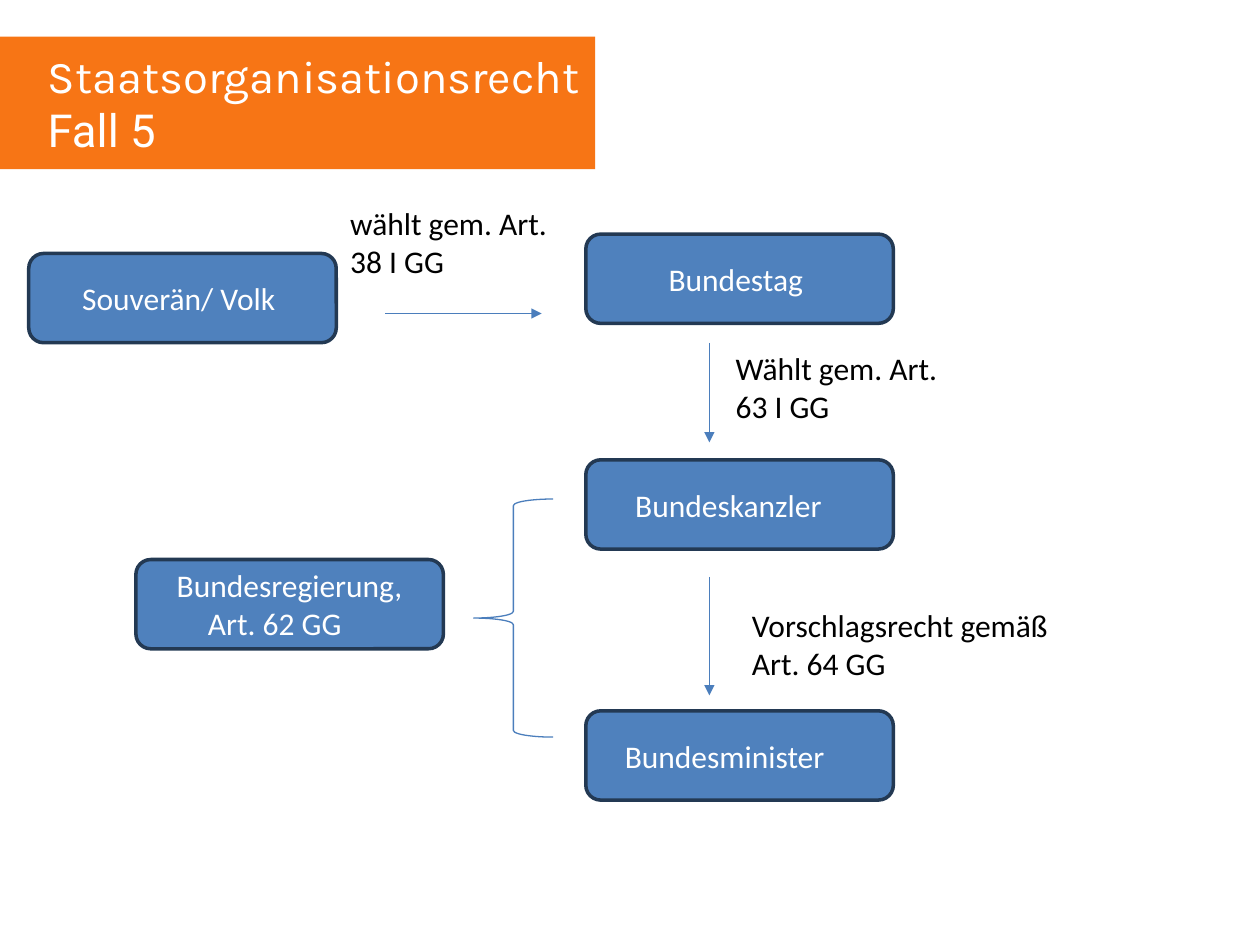
import dataclasses

import pptx
import pptx.dml.color
import pptx.enum.shapes
import pptx.enum.text
import pptx.oxml
import pptx.oxml.ns
import pptx.util

Cm = pptx.util.Cm
Pt = pptx.util.Pt
ShapeKind = pptx.enum.shapes.MSO_SHAPE
Alignment = pptx.enum.text.PP_ALIGN
Anchor = pptx.enum.text.MSO_ANCHOR
AutoSize = pptx.enum.text.MSO_AUTO_SIZE


def color(value):
    return pptx.dml.color.RGBColor.from_string(value)


@dataclasses.dataclass(frozen=True)
class Theme:
    banner: object = color("F77515")
    box: object = color("4F81BD")
    border: object = color("233953")
    link: object = color("4B7EBC")
    light: object = color("FFFFFF")
    dark: object = color("000000")
    body_font: str = "Calibri"
    title_size: object = Pt(26)
    body_size: object = Pt(18)
    border_width: object = Pt(2)
    link_width: object = Pt(0.75)


THEME = Theme()
BOX_WIDTH, BOX_HEIGHT = 6.2, 1.8
ORGAN_LEFT = 11.81
ARROW_LEFT = 14.3


def apply_format(target, values):
    for name, value in values.items():
        setattr(target, name, value)


def write(paragraph, text, font_color, font=THEME.body_font, size=THEME.body_size):
    run = paragraph.add_run()
    run.text = text
    apply_format(run.font, {"name": font, "size": size})
    run.font.color.rgb = font_color


def add_shape(slide, kind, place, fill=None, line=None, width=None):
    shape = slide.shapes.add_shape(kind, *map(Cm, place))
    shape.shadow.inherit = False
    if fill is None:
        shape.fill.background()
    else:
        shape.fill.solid()
        shape.fill.fore_color.rgb = fill
    if line is None:
        shape.line.fill.background()
    else:
        shape.line.color.rgb = line
        shape.line.width = width
    return shape


def add_organ(slide, text, left, top, left_inset=0.25, right_inset=0.25, indent=0):
    shape = add_shape(slide, ShapeKind.ROUNDED_RECTANGLE,
                      (left, top, BOX_WIDTH, BOX_HEIGHT),
                      THEME.box, THEME.border, THEME.border_width)
    apply_format(shape.text_frame, {
        "word_wrap": True,
        "vertical_anchor": Anchor.MIDDLE,
        "margin_left": Cm(left_inset),
        "margin_right": Cm(right_inset),
    })
    paragraph = shape.text_frame.paragraphs[0]
    paragraph.alignment = Alignment.CENTER
    if indent:
        paragraph._p.get_or_add_pPr().set("indent", str(int(Cm(indent))))
    write(paragraph, text, THEME.light)


def add_text_frame(slide, place):
    frame = slide.shapes.add_textbox(*map(Cm, place)).text_frame
    apply_format(frame, {"word_wrap": True, "auto_size": AutoSize.SHAPE_TO_FIT_TEXT})
    return frame


def add_label(slide, text, left, top, width):
    frame = add_text_frame(slide, (left, top, width, BOX_HEIGHT))
    write(frame.paragraphs[0], text, THEME.dark)


def add_title(slide):
    add_shape(slide, ShapeKind.RECTANGLE, (0, 0.74, 12, 2.67), THEME.banner)
    frame = add_text_frame(slide, (0.71, 0.84, 12, 2.49))
    write(frame.paragraphs[0], "Staatsorganisationsrecht", THEME.light,
          "Karla", THEME.title_size)
    write(frame.add_paragraph(), "Fall 5", THEME.light, "Roboto", THEME.title_size)


def add_arrow(slide, *ends):
    arrow = slide.shapes.add_connector(
        pptx.enum.shapes.MSO_CONNECTOR.STRAIGHT, *map(Cm, ends))
    arrow.line.color.rgb = THEME.link
    arrow.line.width = THEME.link_width
    head = pptx.oxml.parse_xml(
        f'<a:tailEnd {pptx.oxml.ns.nsdecls("a")} type="triangle"/>')
    arrow.line._get_or_add_ln().append(head)
    effects = pptx.oxml.parse_xml(f'<a:effectLst {pptx.oxml.ns.nsdecls("a")}/>')
    arrow._element.spPr.append(effects)


def main():
    presentation = pptx.Presentation()
    apply_format(presentation, {"slide_width": Cm(25.4), "slide_height": Cm(19.05)})
    slide = presentation.slides.add_slide(presentation.slide_layouts[6])

    add_title(slide)
    add_organ(slide, "Bundestag", ORGAN_LEFT, 4.72, right_inset=0.4)
    add_organ(slide, "Souverän/ Volk", 0.58, 5.11, right_inset=0.4)
    add_organ(slide, "Bundeskanzler", ORGAN_LEFT, 9.27, right_inset=0.7)
    add_organ(slide, "Bundesminister", ORGAN_LEFT, 14.33, right_inset=0.85)
    add_organ(slide, "Bundesregierung, Art. 62 GG", 2.74, 11.28,
              left_inset=0, right_inset=0.6, indent=0.6)

    add_arrow(slide, 7.77, 6.32, 10.92, 6.32)
    for top, bottom in ((6.91, 8.92), (11.63, 14.02)):
        add_arrow(slide, ARROW_LEFT, top, ARROW_LEFT, bottom)

    add_label(slide, "wählt gem. Art. 38 I GG", 6.81, 3.99, 5.11)
    add_label(slide, "Wählt gem. Art. 63 I GG", 14.58, 6.91, 4.8)
    add_label(slide, "Vorschlagsrecht gemäß Art. 64 GG", 14.91, 12.09, 7.01)

    add_shape(slide, ShapeKind.LEFT_BRACE, (9.55, 10.06, 1.6, 4.8),
              line=THEME.link, width=THEME.link_width)
    presentation.save("out.pptx")


if __name__ == "__main__":
    main()
